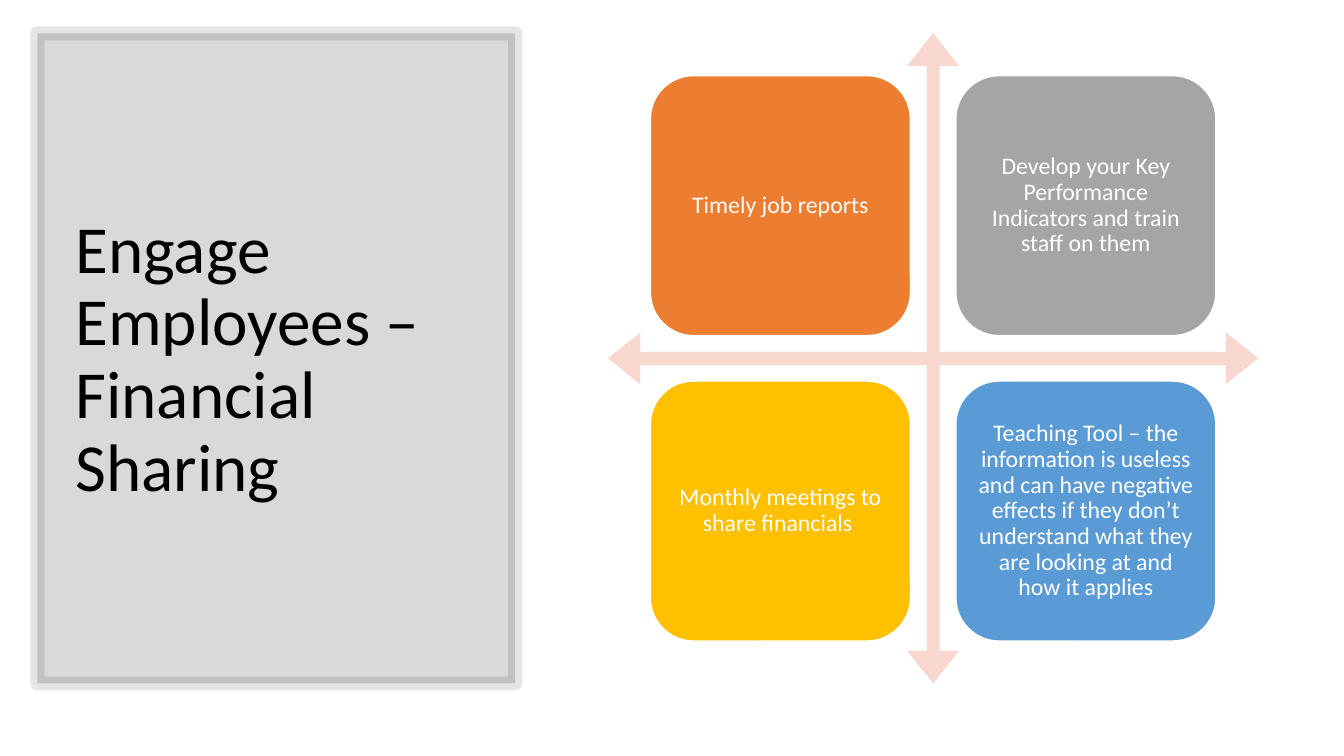
from lxml import etree
from pptx import Presentation
from pptx import util as u
from pptx.dml.color import RGBColor
from pptx.enum import shapes, text
from pptx.oxml.ns import qn

FONT = "Calibri"
HUES = {
    "black": "000000",
    "white": "FFFFFF",
    "arrow": "F8D7CE",
    "orange": "ED7D31",
    "grey": "A5A5A5",
    "gold": "FFC000",
    "blue": "5B9BD5",
}
CARDS = [
    ("Timely job reports", "orange"),
    ("Develop your Key Performance Indicators and train staff on them", "grey"),
    ("Monthly meetings to share financials ", "gold"),
    ("Teaching Tool – the information is useless and can have negative effects "
     "if they don’t understand what they are looking at and how it applies", "blue"),
]
LEFT, TOP, SIDE, STEP = 6.45, 0.75, 2.58, 3.03


def paint(fill, hue, alpha=None):
    fill.solid()
    fill.fore_color.rgb = RGBColor.from_string(HUES[hue])
    if alpha is not None:
        for node in fill._xPr.iter(qn("a:srgbClr")):
            etree.SubElement(node, qn("a:alpha")).set("val", str(alpha * 1000))


def add_box(slide, kind, spot, hue, alpha=None):
    box = slide.shapes.add_shape(kind, *map(u.Inches, spot))
    box.shadow.inherit = False
    paint(box.fill, hue, alpha)
    box.line.fill.background()
    return box


def add_line(box, hue, width, alpha=None):
    # The fill inside the line element keeps its own transparency
    box.line.width = u.Pt(width)
    paint(box.line.fill, hue)
    if alpha is not None:
        tint = box.line._ln.find(".//" + qn("a:srgbClr"))
        etree.SubElement(tint, qn("a:alpha")).set("val", str(alpha * 1000))


def write(box, words, size, hue, align, inset):
    frame = box.text_frame
    frame.word_wrap = True
    frame.vertical_anchor = text.MSO_ANCHOR.MIDDLE
    frame.margin_left = frame.margin_right = u.Inches(inset)
    frame.margin_top = frame.margin_bottom = u.Inches(inset)
    para = frame.paragraphs[0]
    para.alignment = align
    para.line_spacing = 0.9
    run = para.add_run()
    run.text = words
    run.font.name = FONT
    run.font.size = u.Pt(size)
    run.font.color.rgb = RGBColor.from_string(HUES[hue])


def add_panel(slide):
    panel = add_box(slide, shapes.MSO_SHAPE.RECTANGLE,
                    (0.37, 0.33, 4.74, 6.45), "black", 15)
    add_line(panel, "black", 10, 10)


def add_title(slide, words):
    title = slide.shapes.add_textbox(*map(u.Inches, (0.65, 0.7, 4.16, 5.75)))
    write(title, words, 48, "black", text.PP_ALIGN.LEFT, 0.1)


def add_cross(slide):
    cross = add_box(slide, shapes.MSO_SHAPE.QUAD_ARROW,
                    (6.03, 0.33, 6.45, 6.45), "arrow")
    for i, part in enumerate((0.02, 0.04, 0.05)):
        cross.adjustments[i] = part


def add_card(slide, index, words, hue):
    row, col = divmod(index, 2)
    spot = (LEFT + col * STEP, TOP + row * STEP, SIDE, SIDE)
    card = add_box(slide, shapes.MSO_SHAPE.ROUNDED_RECTANGLE, spot, hue)
    add_line(card, "white", 1)
    write(card, words, 17, "white", text.PP_ALIGN.CENTER, 0.07)


def main():
    deck = Presentation()
    deck.slide_width, deck.slide_height = u.Inches(13.33), u.Inches(7.5)
    slide = deck.slides.add_slide(deck.slide_layouts[6])

    # Title side
    add_panel(slide)
    add_title(slide, "Engage Employees – Financial Sharing")

    # Four-way arrow with a card in each quarter
    add_cross(slide)
    for index, (words, hue) in enumerate(CARDS):
        add_card(slide, index, words, hue)

    deck.save("out.pptx")


if __name__ == "__main__":
    main()
